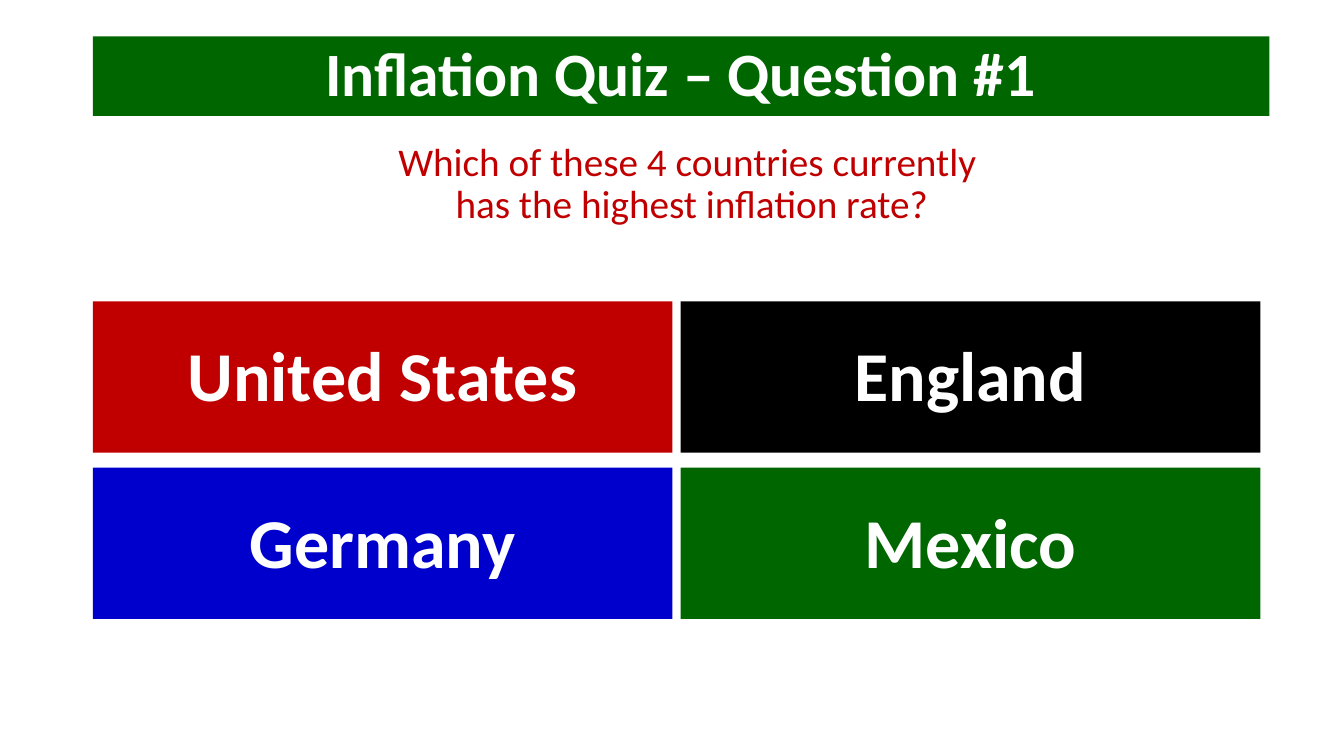
from dataclasses import dataclass

from lxml import etree
from pptx import Presentation
from pptx.dml.color import RGBColor
from pptx.enum.shapes import MSO_SHAPE
from pptx.enum.text import MSO_ANCHOR, MSO_AUTO_SIZE, PP_ALIGN
from pptx.oxml.ns import qn
from pptx.util import Inches, Pt

RECTANGLE = MSO_SHAPE.RECTANGLE
TOP, MIDDLE = MSO_ANCHOR.TOP, MSO_ANCHOR.MIDDLE
CENTER = PP_ALIGN.CENTER
NO_AUTOFIT = MSO_AUTO_SIZE.NONE


@dataclass(frozen=True)
class Theme:
    font: str = "Calibri"
    white: str = "FFFFFF"
    black: str = "000000"
    red: str = "C00000"
    blue: str = "0000CC"
    green: str = "006600"
    title_size: int = 44
    question_size: int = 28
    answer_size: int = 50
    line_spacing: float = 0.9


class QuizSlide:
    def __init__(self, deck, theme):
        self.theme = theme
        self.page = deck.slides.add_slide(deck.slide_layouts[1])

    def place(self, box, left, top, width, height):
        box.left, box.top = Inches(left), Inches(top)
        box.width, box.height = Inches(width), Inches(height)

    def paint(self, box, color):
        box.fill.solid()
        box.fill.fore_color.rgb = RGBColor.from_string(color)

    def set_text(self, box, text, size, color, bold=True, anchor=MIDDLE):
        frame = box.text_frame
        frame.text = text
        frame.word_wrap = True
        frame.auto_size = NO_AUTOFIT
        frame.vertical_anchor = anchor
        para = frame.paragraphs[0]
        para.alignment = CENTER
        para.line_spacing = self.theme.line_spacing
        para.space_before = Pt(0)
        para.font.name = self.theme.font
        para.font.size = Pt(size)
        para.font.bold = bold
        para.font.color.rgb = RGBColor.from_string(color)
        return para

    def title(self, text, *area):
        box = self.page.shapes.title
        self.place(box, *area)
        self.paint(box, self.theme.green)
        self.set_text(box, text, self.theme.title_size, self.theme.white)

    def question(self, text, *area):
        box = self.page.placeholders[1]
        self.place(box, *area)
        para = self.set_text(box, text, self.theme.question_size, self.theme.red,
                             bold=False, anchor=TOP)
        # Plain paragraph without bullet or hanging indent
        properties = para._p.get_or_add_pPr()
        properties.set("marL", "0")
        properties.set("indent", "0")
        bullet = etree.Element(qn("a:buNone"))
        properties.find(qn("a:spcBef")).addnext(bullet)

    def answer(self, text, color, left, top, width, height):
        box = self.page.shapes.add_shape(
            RECTANGLE, Inches(left), Inches(top), Inches(width), Inches(height))
        box.shadow.inherit = False
        self.paint(box, color)
        box.line.fill.background()
        self.set_text(box, text, self.theme.answer_size, self.theme.white)
        box.text_frame.margin_top = Inches(0.09)


def main():
    theme = Theme()
    deck = Presentation()
    deck.slide_width, deck.slide_height = Inches(13.33), Inches(7.5)
    slide = QuizSlide(deck, theme)

    # Heading and question
    left = 0.92
    slide.title("Inflation Quiz – Question #1", left, 0.36, 11.67, 0.79)
    slide.question("Which of these 4 countries currently \vhas the highest inflation rate?",
                   left, 1.36, 11.88, 1.4)

    # Two-by-two grid of answers
    answers = [("United States", theme.red), ("England", theme.black),
               ("Germany", theme.blue), ("Mexico", theme.green)]
    width, height = 5.75, 1.5
    column_gap, row_gap = 0.08, 0.15
    for index, (country, color) in enumerate(answers):
        row, column = divmod(index, 2)
        slide.answer(country, color,
                     left + column * (width + column_gap),
                     2.99 + row * (height + row_gap), width, height)

    deck.save("out.pptx")


if __name__ == "__main__":
    main()
